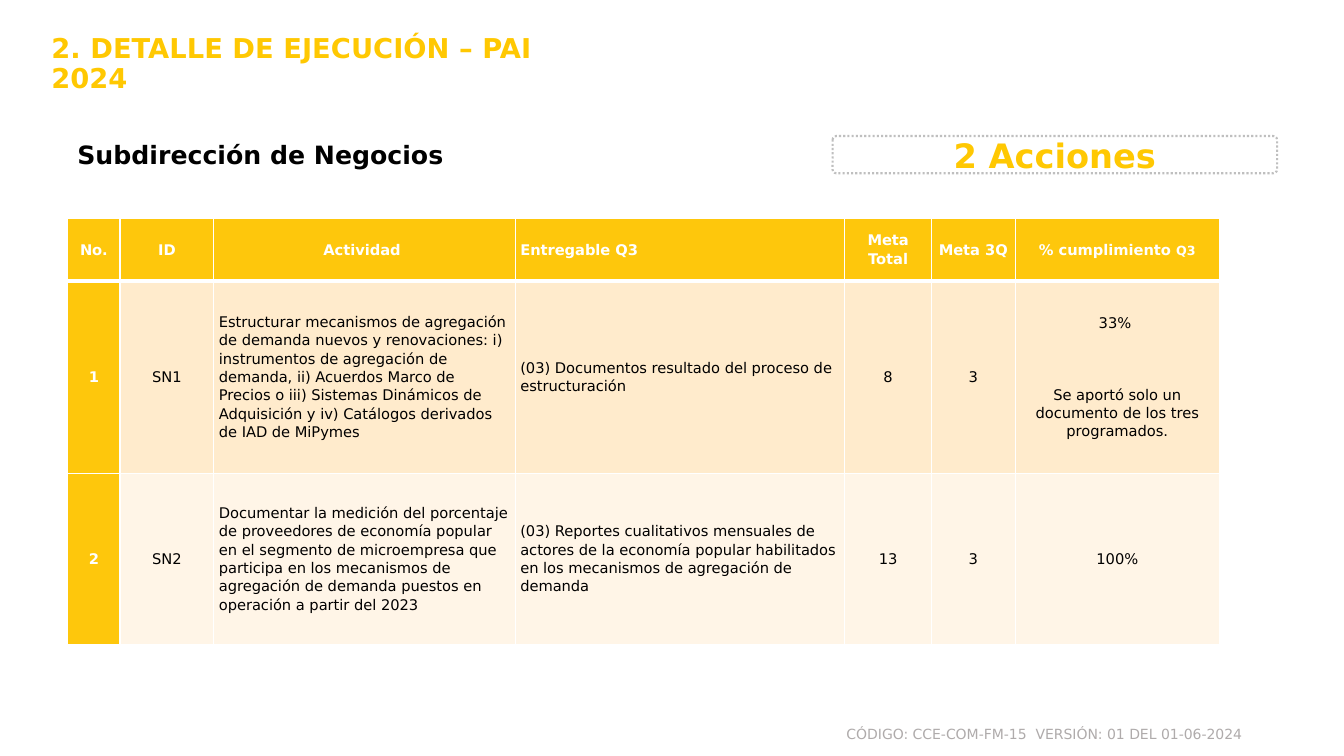
import pptx
import pptx.util
import pptx.dml.color
import pptx.enum.dml
import pptx.enum.shapes
import pptx.enum.text
import pptx.oxml.ns
from lxml import etree

Pt = pptx.util.Pt
RGBColor = pptx.dml.color.RGBColor
Align = pptx.enum.text.PP_ALIGN
Anchor = pptx.enum.text.MSO_ANCHOR

FONT = "DejaVu Sans"
YELLOW = RGBColor(0xFF, 0xC8, 0x02)
HEADER_YELLOW = RGBColor(0xFE, 0xC7, 0x0C)
DARK_BAND = RGBColor(0xFF, 0xEB, 0xCC)
LIGHT_BAND = RGBColor(0xFF, 0xF5, 0xE7)
WHITE = RGBColor(0xFF, 0xFF, 0xFF)
BLACK = RGBColor(0, 0, 0)
FOOTER_GRAY = RGBColor(0xAF, 0xAB, 0xAB)
BORDER_GRAY = RGBColor(0xBF, 0xBF, 0xBF)

COLUMN_WIDTHS = [37.4, 67, 215.3, 235.4, 61.9, 59.8, 146]
ROW_HEIGHTS = [44.7, 137.5, 122.4]
LEFT_COLUMNS = (2, 3)  # activity and deliverable, left aligned below the header

# Each cell is a list of paragraphs
ROWS = [
    [["No."], ["ID"], ["Actividad "], ["Entregable Q3"], ["Meta Total"],
     ["Meta 3Q"], ["% cumplimiento "]],
    [["1"], ["SN1"],
     ["Estructurar mecanismos de agregación de demanda nuevos y renovaciones: "
      "i) instrumentos de agregación de demanda, ii) Acuerdos Marco de Precios "
      "o iii) Sistemas Dinámicos de Adquisición y iv) Catálogos derivados de "
      "IAD de MiPymes"],
     ["(03) Documentos resultado del proceso de estructuración"],
     ["8"], ["3"],
     ["33% ", "Se aportó solo un documento de los tres programados."]],
    [["2"], ["SN2"],
     ["Documentar la medición del porcentaje de proveedores de economía popular "
      "en el segmento de microempresa que participa en los mecanismos de "
      "agregación de demanda puestos en operación a partir del 2023"],
     ["(03) Reportes cualitativos mensuales de actores de la economía popular "
      "habilitados en los mecanismos de agregación de demanda"],
     ["13"], ["3"], ["100%"]],
]


def format_run(run, size, color, bold=False):
    run.font.name = FONT
    run.font.size = Pt(size)
    run.font.bold = bold
    run.font.color.rgb = color


def write_line(text_frame, text, size, color, bold=False, align=Align.LEFT):
    text_frame.text = text
    text_frame.word_wrap = True
    paragraph = text_frame.paragraphs[0]
    paragraph.alignment = align
    format_run(paragraph.runs[0], size, color, bold)
    return paragraph


def append_run(paragraph, text, size, color, bold=False):
    run = paragraph.add_run()
    run.text = text
    format_run(run, size, color, bold)


def add_title(slide, text):
    title = slide.shapes.title
    title.left, title.top, title.width, title.height = Pt(29.5), Pt(21.6), Pt(396.7), Pt(56.2)
    paragraph = write_line(title.text_frame, text, 19.5, YELLOW, True)
    paragraph.line_spacing = 0.9
    title.text_frame.vertical_anchor = Anchor.TOP
    title.text_frame.auto_size = pptx.enum.text.MSO_AUTO_SIZE.NONE


def add_text(slide, left, top, width, height, *line):
    box = slide.shapes.add_textbox(Pt(left), Pt(top), Pt(width), Pt(height))
    return write_line(box.text_frame, *line)


def add_badge(slide, text):
    badge = slide.shapes.add_shape(
        pptx.enum.shapes.MSO_SHAPE.ROUNDED_RECTANGLE,
        Pt(594.7), Pt(97.2), Pt(317.5), Pt(26.6))
    badge.adjustments[0] = 0.1
    badge.shadow.inherit = False
    badge.fill.background()
    badge.line.color.rgb = BORDER_GRAY
    badge.line.width = Pt(1.5)
    badge.line.dash_style = pptx.enum.dml.MSO_LINE.ROUND_DOT
    write_line(badge.text_frame, text, 24, YELLOW, True, Align.CENTER)
    badge.text_frame.vertical_anchor = Anchor.MIDDLE


def set_borders(cell, top, bottom):
    properties = cell._tc.get_or_add_tcPr()
    qn = pptx.oxml.ns.qn
    for side, width in (("L", 1), ("R", 1), ("T", top), ("B", bottom)):
        line = etree.SubElement(properties, qn(f"a:ln{side}"), w=str(Pt(width)))
        fill = etree.SubElement(line, qn("a:solidFill"))
        etree.SubElement(fill, qn("a:srgbClr"), val=str(WHITE))


def fill_cell(cell, lines, fill, color, bold, align):
    cell.fill.solid()
    cell.fill.fore_color.rgb = fill
    cell.vertical_anchor = Anchor.MIDDLE
    cell.margin_left = cell.margin_right = Pt(3.6)
    cell.margin_top = cell.margin_bottom = 0
    cell.text_frame.text = "\n".join(lines)
    for paragraph in cell.text_frame.paragraphs:
        paragraph.alignment = align
        paragraph.line_spacing = 1.07
        paragraph.space_after = Pt(8)
        format_run(paragraph.runs[0], 10.5, color, bold)


def add_actions_table(slide):
    table = slide.shapes.add_table(
        len(ROWS), len(COLUMN_WIDTHS), Pt(48.4), Pt(155.8),
        Pt(sum(COLUMN_WIDTHS)), Pt(sum(ROW_HEIGHTS))).table
    table.first_row = table.horz_banding = False
    for column, width in zip(table.columns, COLUMN_WIDTHS):
        column.width = Pt(width)
    for row, height in zip(table.rows, ROW_HEIGHTS):
        row.height = Pt(height)

    bands = [HEADER_YELLOW, DARK_BAND, LIGHT_BAND]
    for r, row in enumerate(ROWS):
        for c, lines in enumerate(row):
            cell = table.cell(r, c)
            heading = r == 0 or c == 0
            left = c == 3 or (r > 0 and c in LEFT_COLUMNS)
            set_borders(cell, 3 if r == 1 else 1, 3 if r == 0 else 1)
            fill_cell(cell, lines, HEADER_YELLOW if heading else bands[r],
                      WHITE if heading else BLACK, heading,
                      Align.LEFT if left else Align.CENTER)

    # Smaller quarter in the last heading, wide gap below the first result
    append_run(table.cell(0, 6).text_frame.paragraphs[0], "Q3", 9, WHITE, True)
    table.cell(1, 6).text_frame.paragraphs[0].space_after = Pt(38.4)


def main():
    presentation = pptx.Presentation()
    presentation.slide_width, presentation.slide_height = Pt(960), Pt(540)
    slide = presentation.slides.add_slide(presentation.slide_layouts[5])

    # Headings
    add_title(slide, "2. DETALLE DE EJECUCIÓN – PAI 2024")
    subtitle = add_text(slide, 48.2, 90, 595.4, 36,
                        "Subdirección de Negocios", 18, BLACK, True)
    append_run(subtitle, " ", 24, BLACK)
    add_badge(slide, "2 Acciones")

    # Table of actions
    add_actions_table(slide)

    # Footer
    add_text(slide, 345.6, 514.8, 548.6, 19.4,
             "CÓDIGO: CCE-COM-FM-15  VERSIÓN: 01 DEL 01-06-2024",
             10, FOOTER_GRAY, False, Align.RIGHT)

    presentation.save("out.pptx")


if __name__ == "__main__":
    main()
